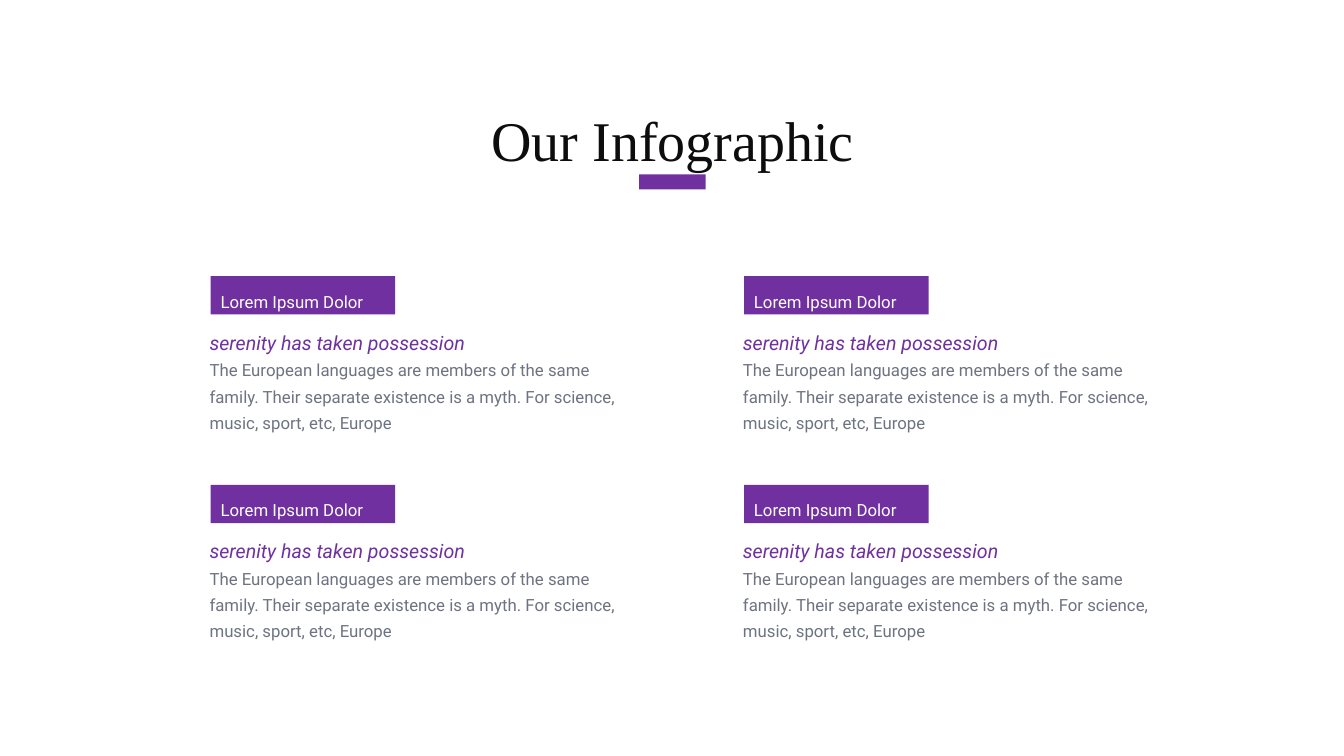
from dataclasses import dataclass
from itertools import product

from pptx import Presentation
from pptx import util as u
from pptx.dml.color import RGBColor
from pptx.enum import shapes, text

EMU_PER_PX = 9144  # 100 px to the inch

PURPLE = RGBColor(0x70, 0x30, 0xA0)
GREY = RGBColor(0x6D, 0x73, 0x81)
INK = RGBColor(0x0D, 0x0D, 0x0D)
WHITE = RGBColor(0xFF, 0xFF, 0xFF)

COLUMN_LEFTS = (198, 727)
ROW_TOPS = (274, 481)


@dataclass(frozen=True)
class Box:
    left: int
    top: int
    width: int
    height: int

    def emu(self) -> tuple[int, ...]:
        return tuple(px * EMU_PER_PX
                     for px in (self.left, self.top, self.width, self.height))


@dataclass(frozen=True)
class Line:
    words: str
    size: int
    color: RGBColor
    font: str = "Roboto"
    italic: bool = False


LABEL = Line("Lorem Ipsum Dolor", 12, WHITE)
DESCRIPTION = (
    Line("serenity has taken possession", 14, PURPLE, italic=True),
    Line("The European languages are members of the same family. "
         "Their separate existence is a myth. For science, "
         "music, sport, etc, Europe", 12, GREY),
)
TITLE = Line("Our Infographic", 40, INK, font="Times New Roman")


def write(frame, lines: tuple[Line, ...], spacing: float,
          align=text.PP_ALIGN.LEFT) -> None:
    frame.word_wrap = True
    frame.auto_size = text.MSO_AUTO_SIZE.SHAPE_TO_FIT_TEXT
    frame.vertical_anchor = text.MSO_ANCHOR.TOP
    for index, line in enumerate(lines):
        paragraph = frame.add_paragraph() if index else frame.paragraphs[0]
        paragraph.alignment = align
        paragraph.line_spacing = spacing
        run = paragraph.add_run()
        run.text = line.words
        run.font.name = line.font
        run.font.size = u.Pt(line.size)
        run.font.italic = line.italic
        run.font.color.rgb = line.color


def add_bar(slide, box: Box):
    bar = slide.shapes.add_shape(shapes.MSO_SHAPE.RECTANGLE, *box.emu())
    bar.shadow.inherit = False
    bar.fill.solid()
    bar.fill.fore_color.rgb = PURPLE
    bar.line.fill.background()
    return bar


def add_topic(slide, left: int, top: int) -> None:
    """Draw a purple label with its description below."""
    description = slide.shapes.add_textbox(*Box(left, top + 42, 432, 118).emu())
    write(description.text_frame, DESCRIPTION, 1.3)
    label = add_bar(slide, Box(left + 11, top, 183, 38))
    write(label.text_frame, (LABEL,), 1.5)


def main() -> None:
    deck = Presentation()
    deck.slide_width, deck.slide_height = 1333 * EMU_PER_PX, 750 * EMU_PER_PX
    slide = deck.slides.add_slide(deck.slide_layouts[6])

    for left, top in product(COLUMN_LEFTS, ROW_TOPS):
        add_topic(slide, left, top)

    title = slide.shapes.add_textbox(*Box(354, 66, 626, 99).emu())
    write(title.text_frame, (TITLE,), 1.5, text.PP_ALIGN.CENTER)
    add_bar(slide, Box(634, 173, 66, 15))

    deck.save("out.pptx")


if __name__ == "__main__":
    main()
